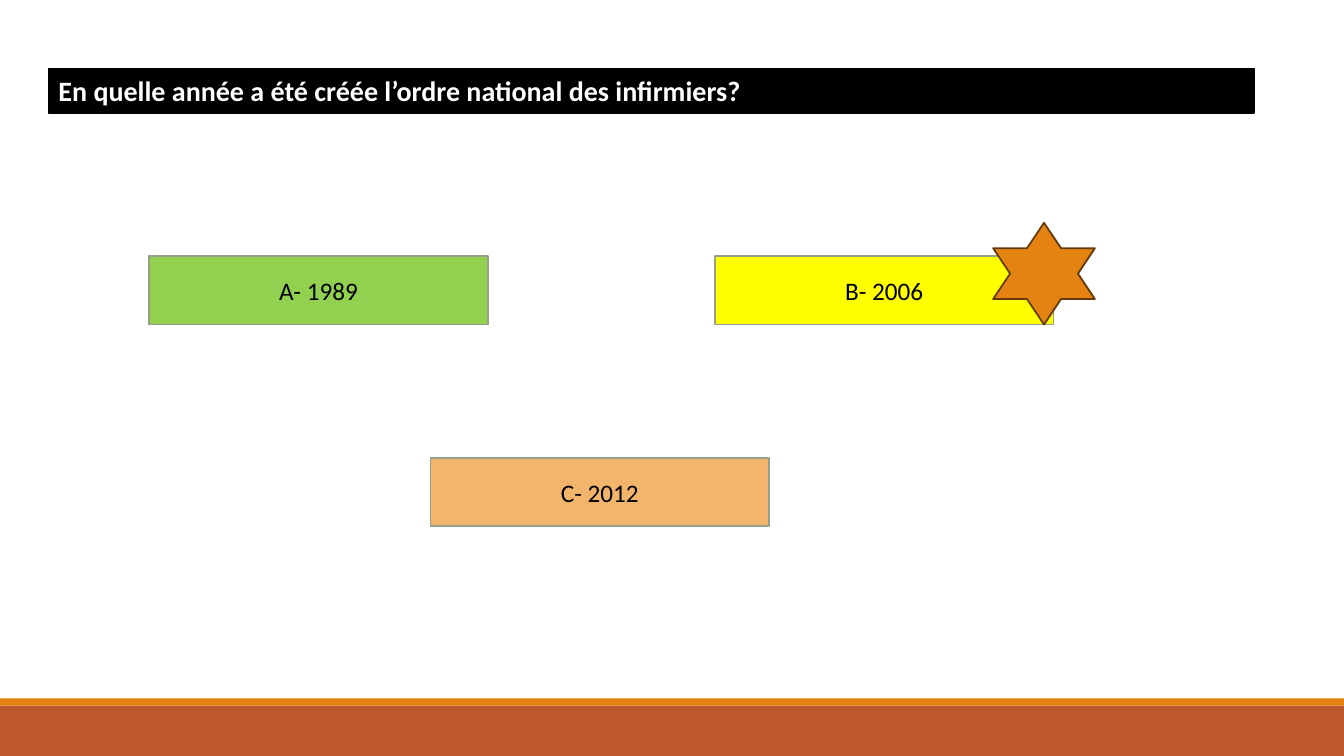
import pptx
import pptx.dml.color
import pptx.enum.shapes
import pptx.enum.text
import pptx.util

Inches, Pt = pptx.util.Inches, pptx.util.Pt
SHAPE = pptx.enum.shapes.MSO_SHAPE
ANCHOR = pptx.enum.text.MSO_ANCHOR
ALIGN = pptx.enum.text.PP_ALIGN

COLORS = {
    "black": "000000", "white": "FFFFFF",
    "rust": "BD582C", "orange": "E48312", "brown": "643908",
    "green": "92D050", "yellow": "FFFF00", "peach": "F3B56C", "sage": "94A088",
}
SLIDE_W, SLIDE_H = 13.33, 7.5
ANSWER_W, ANSWER_H = 3.36, 0.68
ANSWERS = [
    ("A- 1989", "green", 1.48, 2.54),
    ("B- 2006", "yellow", 7.09, 2.54),
    ("C- 2012", "peach", 4.27, 4.54),
]


def rgb(name):
    return pptx.dml.color.RGBColor.from_string(COLORS[name])


def paint(sp, fill, line=None):
    sp.fill.solid()
    sp.fill.fore_color.rgb = rgb(fill)
    if line:
        sp.line.color.rgb = rgb(line)
        sp.line.width = Pt(1.25)
    else:
        sp.line.fill.background()


def add_shape(slide, kind, x, y, w, h, fill, line=None):
    sp = slide.shapes.add_shape(kind, Inches(x), Inches(y), Inches(w), Inches(h))
    sp.shadow.inherit = False
    paint(sp, fill, line)
    return sp


def write(sp, text, size, color, align, anchor, bold=False):
    tf = sp.text_frame
    tf.text = text
    tf.word_wrap = True
    tf.auto_size = pptx.enum.text.MSO_AUTO_SIZE.NONE
    tf.vertical_anchor = anchor
    p = tf.paragraphs[0]
    p.alignment = align
    font = p.runs[0].font
    font.name, font.size, font.bold = "Calibri", Pt(size), bold
    font.color.rgb = rgb(color)


def add_footer(slide, x, y, w, h, stripe=0.07):
    add_shape(slide, SHAPE.RECTANGLE, x, y + stripe, w, h - stripe, "rust")
    add_shape(slide, SHAPE.RECTANGLE, x, y, w, stripe, "orange")


def add_question(slide, x, y, w, h):
    sp = slide.shapes.title
    sp.left, sp.top, sp.width, sp.height = map(Inches, (x, y, w, h))
    paint(sp, "black", "black")
    write(sp, "En quelle année a été créée l’ordre national des infirmiers?",
          20, "white", ALIGN.LEFT, ANCHOR.TOP, bold=True)


def add_answer(slide, x, y, w, h, text, fill):
    sp = add_shape(slide, SHAPE.RECTANGLE, x, y, w, h, fill, "sage")
    write(sp, text, 18, "black", ALIGN.CENTER, ANCHOR.MIDDLE)


def add_star(slide, x, y, w, h, size=1.01):
    """Star centred near the right edge of the answer box, on its bottom line."""
    add_shape(slide, SHAPE.STAR_6_POINT, x + w - 0.6, y + h - size, size, size,
              "orange", "brown")


def main():
    prs = pptx.Presentation()
    prs.slide_width, prs.slide_height = Inches(SLIDE_W), Inches(SLIDE_H)
    slide = prs.slides.add_slide(prs.slide_layouts.get_by_name("Title Only"))

    # Footer bands and question
    add_footer(slide, 0, 6.93, SLIDE_W, SLIDE_H - 6.93)
    add_question(slide, 0.48, 0.68, 11.96, 0.44)

    # Answers, with a star on the correct one
    for text, fill, x, y in ANSWERS:
        add_answer(slide, x, y, ANSWER_W, ANSWER_H, text, fill)
    _, _, x, y = ANSWERS[1]
    add_star(slide, x, y, ANSWER_W, ANSWER_H)

    prs.save("out.pptx")


if __name__ == "__main__":
    main()
